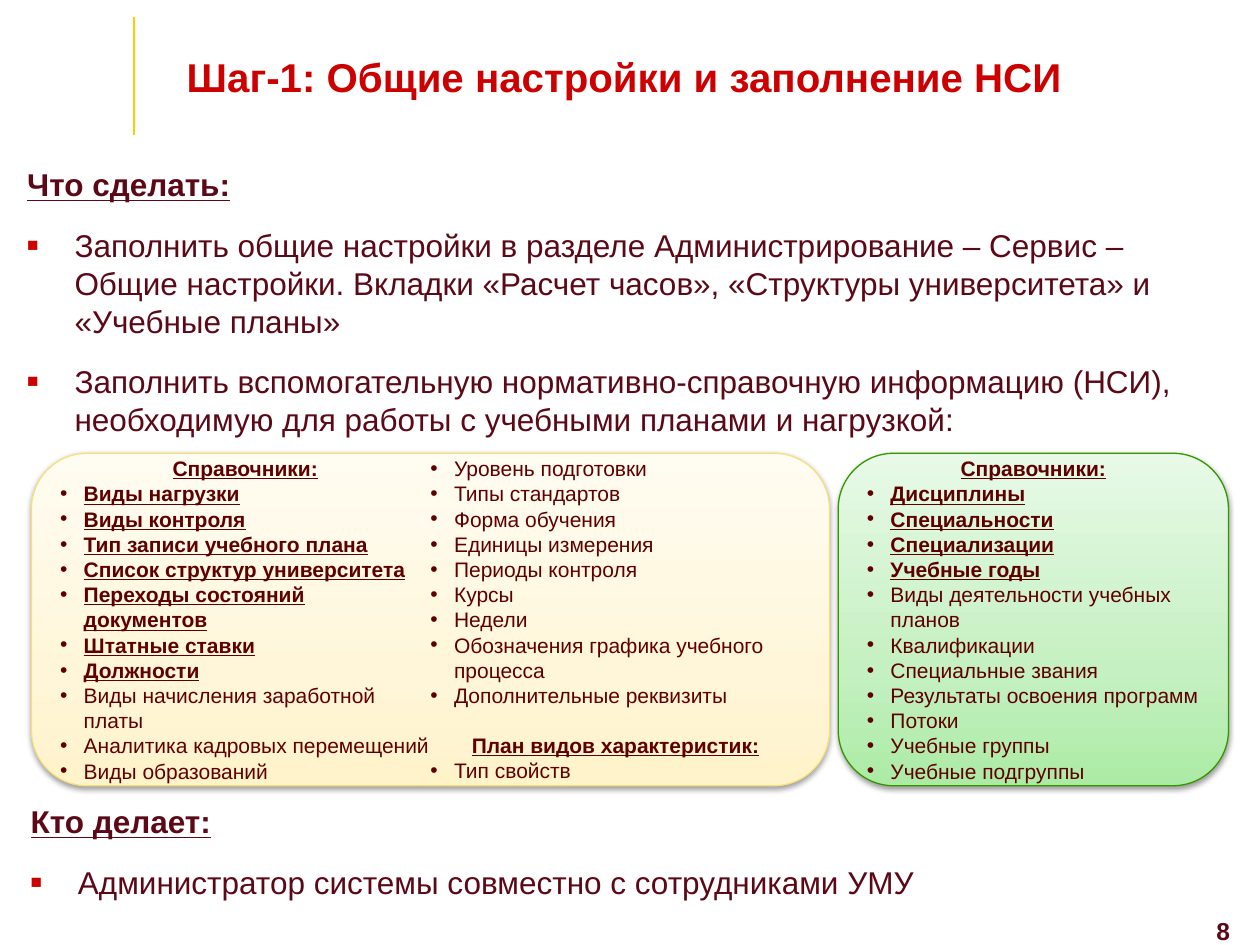
from pptx import Presentation
from pptx import util as u
from pptx.dml.color import RGBColor
from pptx.enum import shapes, text
from pptx.oxml import parse_xml
from pptx.oxml.ns import nsdecls
from copy import deepcopy

Pt = u.Pt
RED = RGBColor(0xCC, 0x00, 0x00)
GOLD = RGBColor(0xFF, 0xCC, 0x00)
WINE = RGBColor(0x5B, 0x09, 0x17)
MAROON = RGBColor(0x5F, 0x00, 0x00)
CREAM_LINE = RGBColor(0xF6, 0xE0, 0x7D)
CREAM = (RGBColor(0xFF, 0xF3, 0xCA), RGBColor(0xFF, 0xF6, 0xDA), RGBColor(0xFF, 0xFC, 0xF1))
GREEN_LINE = RGBColor(0x35, 0x96, 0x00)
GREEN = (RGBColor(0xAC, 0xEB, 0xA5), RGBColor(0xC5, 0xF0, 0xC1), RGBColor(0xE8, 0xFA, 0xE7))
STOPS = (0, 0.35, 1)

TITLE = {"size": Pt(23), "bold": True}
BODY = {"size": Pt(18)}
LIST = {"size": Pt(12)}
NUMBER = {"size": Pt(14), "bold": True}
STRONG = {"bold": True, "underline": True}
SQUARE = {"char": "■", "indent": 27, "extra": f'<a:buClr {nsdecls("a")}><a:srgbClr val="{RED}"/></a:buClr>'
          f'|<a:buSzPct {nsdecls("a")} val="60000"/>'}
DOT = {"char": "•", "indent": 13.5, "extra": ""}

TASKS = [
    "Заполнить общие настройки в разделе Администрирование – Сервис – Общие настройки. "
    "Вкладки «Расчет часов», «Структуры университета» и «Учебные планы»",
    "Заполнить вспомогательную нормативно-справочную информацию (НСИ), "
    "необходимую для работы с учебными планами и нагрузкой:",
]
DOERS = ["Администратор системы совместно с сотрудниками УМУ"]
MAIN_STRONG = ["Виды нагрузки", "Виды контроля", "Тип записи учебного плана",
               "Список структур университета", "Переходы состояний документов",
               "Штатные ставки", "Должности"]
MAIN_PLAIN = ["Виды начисления заработной платы", "Аналитика кадровых перемещений",
              "Виды образований", "Уровень подготовки", "Типы стандартов", "Форма обучения",
              "Единицы измерения", "Периоды контроля", "Курсы", "Недели",
              "Обозначения графика учебного процесса", "Дополнительные реквизиты"]
STUDY_STRONG = ["Дисциплины", "Специальности", "Специализации", "Учебные годы"]
STUDY_PLAIN = ["Виды деятельности учебных планов", "Квалификации", "Специальные звания",
               "Результаты освоения программ", "Потоки", "Учебные группы", "Учебные подгруппы"]


def set_attrs(obj, values):
    """Set each named attribute of an object."""
    for name, value in values.items():
        setattr(obj, name, value)


def add_bullet(p, char, indent, extra):
    """Give a paragraph a hanging bullet."""
    pPr = p._p.get_or_add_pPr()
    pPr.set("marL", str(Pt(indent)))
    pPr.set("indent", str(-Pt(indent)))
    for xml in filter(None, extra.split("|")):
        pPr.append(parse_xml(xml))
    pPr.append(parse_xml(f'<a:buFont {nsdecls("a")} typeface="Arial"/>'))
    pPr.append(parse_xml(f'<a:buChar {nsdecls("a")} char="{char}"/>'))


def add_par(tf, words, color, font, bullet=None, **layout):
    """Add a paragraph, using the empty first one when there is one."""
    p = tf.paragraphs[0] if not tf.text else tf.add_paragraph()
    set_attrs(p, {"alignment": text.PP_ALIGN.LEFT, **layout})
    if bullet:
        add_bullet(p, **bullet)
    r = p.add_run()
    r.text = words
    set_attrs(r.font, {"name": "Arial", "bold": False, **font})
    r.font.color.rgb = color


def add_title(s, words):
    """Place and format the title placeholder."""
    sp = s.shapes.title
    set_attrs(sp, {"left": Pt(99.5), "top": Pt(3.5), "width": Pt(701), "height": Pt(85)})
    tf = sp.text_frame
    set_attrs(tf, {"vertical_anchor": text.MSO_ANCHOR.MIDDLE, "auto_size": text.MSO_AUTO_SIZE.NONE})
    add_par(tf, words, RED, TITLE, line_spacing=0.8)
    sp.width = Pt(610)


def add_text_box(s, left, top, width, height):
    """Add a wrapping text box and return its text frame."""
    tf = s.shapes.add_textbox(Pt(left), Pt(top), Pt(width), Pt(height)).text_frame
    tf.word_wrap = True
    return tf


def add_section(s, left, top, heading, items):
    """Add an underlined heading followed by square-bulleted items."""
    tf = add_text_box(s, left, top, 701, 163)
    add_par(tf, heading, WINE, {**BODY, **STRONG}, space_after=Pt(9))
    for item in items:
        add_par(tf, item, WINE, BODY, SQUARE, space_before=Pt(4), space_after=Pt(9))


def add_panel(s, left, width, line, colors):
    """Add a rounded gradient panel with a soft shadow and return its shape."""
    sp = s.shapes.add_shape(shapes.MSO_SHAPE.ROUNDED_RECTANGLE, Pt(left), Pt(259), Pt(width), Pt(190))
    sp.fill.gradient()
    sp.fill.gradient_angle = 90
    first = sp._element.spPr.xpath(".//a:gs")[0]
    first.addnext(deepcopy(first))
    for stop, position, color in zip(sp.fill.gradient_stops, STOPS, colors):
        stop.position = position
        stop.color.rgb = color
    sp.line.color.rgb = line
    sp.line.width = Pt(0.75)
    sp.shadow.inherit = False
    sp._element.spPr.xpath("a:effectLst")[0].append(parse_xml(
        f'<a:outerShdw {nsdecls("a")} blurRad="{Pt(3.1)}" dist="{Pt(1.6)}" dir="5400000" rotWithShape="0">'
        '<a:srgbClr val="000000"><a:alpha val="38000"/></a:srgbClr></a:outerShdw>'))
    set_attrs(sp.text_frame, {"word_wrap": True, "vertical_anchor": text.MSO_ANCHOR.MIDDLE})
    return sp


def add_list(tf, heading, strong, plain, **layout):
    """Add a centred heading with strong and plain bulleted items."""
    add_par(tf, heading, MAROON, {**LIST, **STRONG}, alignment=text.PP_ALIGN.CENTER, **layout)
    for item in strong:
        add_par(tf, item, MAROON, {**LIST, **STRONG}, DOT)
    for item in plain:
        add_par(tf, item, MAROON, LIST, DOT)


def add_rule(s, x, top, bottom):
    """Add the vertical accent line beside the title."""
    c = s.shapes.add_connector(shapes.MSO_CONNECTOR.STRAIGHT, Pt(x), Pt(top), Pt(x), Pt(bottom))
    c.line.color.rgb = GOLD
    c.line.width = Pt(1)
    c._element.spPr.append(parse_xml(f'<a:effectLst {nsdecls("a")}/>'))


def main():
    """Build the slide and save it."""
    prs = Presentation()
    set_attrs(prs, {"slide_width": Pt(720), "slide_height": Pt(540)})
    s = prs.slides.add_slide(prs.slide_layouts[5])
    add_rule(s, 76.5, 9.5, 77)
    add_title(s, "Шаг-1: Общие настройки и заполнение НСИ")
    add_section(s, 8.5, 91, "Что сделать:", TASKS)
    add_par(add_text_box(s, 649.5, 520, 60.5, 20), "8", WINE, NUMBER, alignment=text.PP_ALIGN.RIGHT)

    tf = add_panel(s, 18, 456, CREAM_LINE, CREAM).text_frame
    tf._txBody.bodyPr.set("numCol", "2")
    add_list(tf, "Справочники:", MAIN_STRONG, MAIN_PLAIN)
    add_list(tf, "План видов характеристик:", [], ["Тип свойств"], space_before=Pt(14))

    add_section(s, 10.5, 455, "Кто делает:", DOERS)
    tf = add_panel(s, 479, 223, GREEN_LINE, GREEN).text_frame
    add_list(tf, "Справочники:", STUDY_STRONG, STUDY_PLAIN)
    prs.save("out.pptx")


if __name__ == "__main__":
    main()
